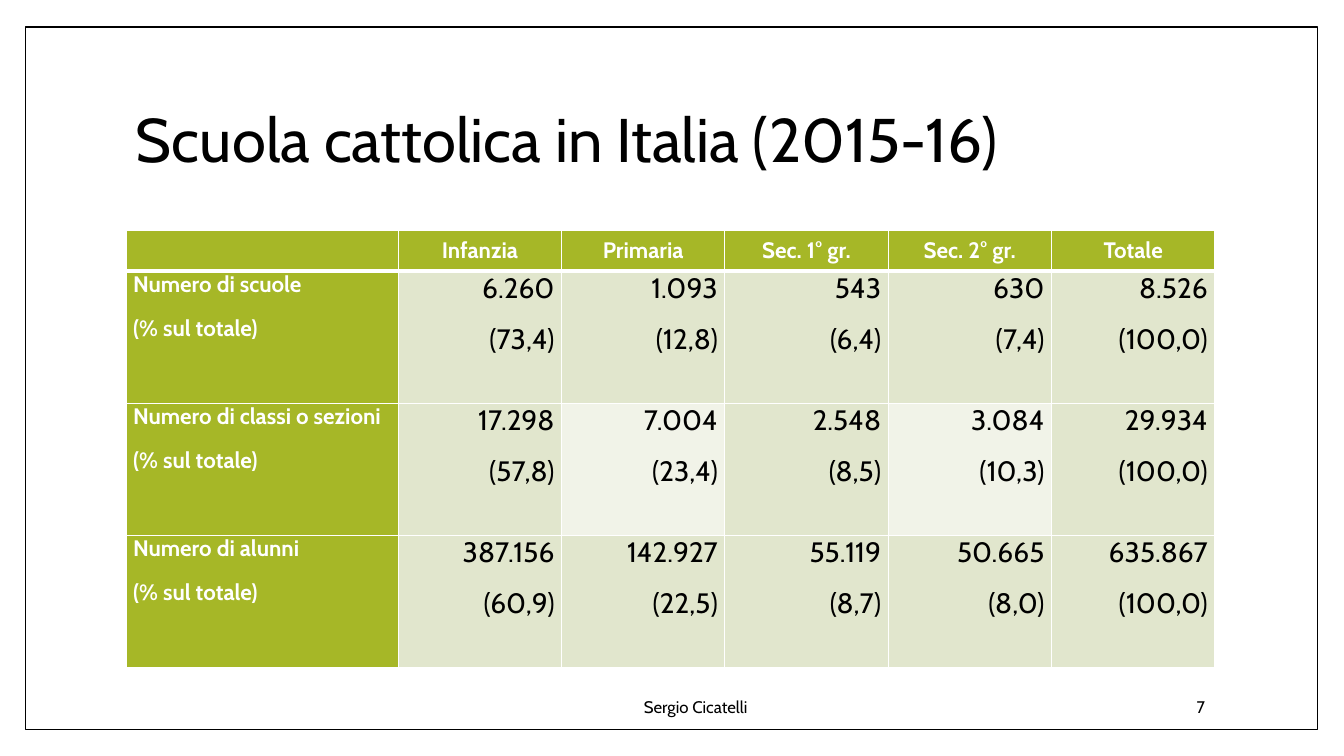
from dataclasses import dataclass

from lxml import etree
from pptx import Presentation
from pptx.dml.color import RGBColor
from pptx.enum.shapes import MSO_SHAPE
from pptx.enum.text import MSO_ANCHOR, PP_ALIGN
from pptx.oxml.ns import qn
from pptx.util import Emu, Pt

PX = 9144  # 100 px to the inch
RECT = MSO_SHAPE.RECTANGLE
TOP, MIDDLE = MSO_ANCHOR.TOP, MSO_ANCHOR.MIDDLE
LEFT, CENTER, RIGHT = PP_ALIGN.LEFT, PP_ALIGN.CENTER, PP_ALIGN.RIGHT


@dataclass(frozen=True)
class Theme:
    font: str = "Cabin"
    ink: str = "000000"
    paper: str = "FFFFFF"
    green: str = "A6B727"
    band: str = "E1E6CD"
    pale: str = "F1F3E8"
    title: int = 44
    figure: int = 20
    label: int = 16
    footer: int = 12


THEME = Theme()

HEADERS = ["", "Infanzia", "Primaria", "Sec. 1° gr.", "Sec. 2° gr.", "Totale"]
SHARE = "(% sul totale)"
ROWS = [
    ("Numero di scuole",
     ["6.260", "1.093", "543", "630", "8.526"],
     ["73,4", "12,8", "6,4", "7,4", "100,0"]),
    ("Numero di classi o sezioni",
     ["17.298", "7.004", "2.548", "3.084", "29.934"],
     ["57,8", "23,4", "8,5", "10,3", "100,0"]),
    ("Numero di alunni",
     ["387.156", "142.927", "55.119", "50.665", "635.867"],
     ["60,9", "22,5", "8,7", "8,0", "100,0"]),
]


def px(*lengths):
    return [Emu(n * PX) for n in lengths]


def rgb(value):
    return RGBColor.from_string(value)


def set_attrs(obj, values):
    for name, value in values.items():
        setattr(obj, name, value)


def write(tf, lines, size, color=THEME.ink, bold=False, **para_format):
    """Put each line in its own paragraph, all in one style."""
    for i, line in enumerate(lines):
        p = tf.add_paragraph() if i else tf.paragraphs[0]
        set_attrs(p, para_format)
        r = p.add_run()
        r.text = line
        set_attrs(r.font, {"name": THEME.font, "size": Pt(size), "bold": bold})
        r.font.color.rgb = rgb(color)


def add_text(s, box, text, size, **para_format):
    tf = s.shapes.add_textbox(*px(*box)).text_frame
    set_attrs(tf, {"word_wrap": True, "vertical_anchor": MIDDLE})
    write(tf, [text], size, **para_format)


def add_frame(s, box):
    sp = s.shapes.add_shape(RECT, *px(*box))
    sp.shadow.inherit = False
    sp.fill.solid()
    sp.fill.fore_color.rgb = rgb(THEME.paper)
    sp.line.color.rgb = rgb(THEME.ink)
    sp.line.width = Pt(1)


def set_borders(cell, widths):
    tc_pr = cell._tc.get_or_add_tcPr()
    for side, width in widths.items():
        ln = etree.SubElement(tc_pr, qn(f"a:ln{side}"), w=str(Pt(width)))
        fill = etree.SubElement(ln, qn("a:solidFill"))
        etree.SubElement(fill, qn("a:srgbClr"), val=THEME.paper)


def cell_lines(row, col):
    if row == 0:
        return [HEADERS[col]] if HEADERS[col] else []
    label, counts, shares = ROWS[row - 1]
    if col == 0:
        return [label, SHARE]
    return [counts[col - 1], f"({shares[col - 1]})"]


def fill_cell(cell, row, col):
    heading = row == 0 or col == 0
    set_attrs(cell, {
        "margin_left": Emu(7 * PX), "margin_right": Emu(7 * PX),
        "margin_top": 0, "margin_bottom": 0,
        "vertical_anchor": TOP if row else MIDDLE,
    })
    # A thick rule parts the header from the body
    set_borders(cell, {"L": 1, "R": 1, "T": 3 if row == 1 else 1,
                       "B": 1 if row else 3})
    # Odd rows and odd columns are banded
    body = THEME.band if row % 2 or col % 2 else THEME.pale
    cell.fill.solid()
    cell.fill.fore_color.rgb = rgb(THEME.green if heading else body)
    write(cell.text_frame, cell_lines(row, col),
          THEME.label if heading else THEME.figure,
          THEME.paper if heading else THEME.ink, heading,
          alignment=CENTER if row == 0 else RIGHT if col else LEFT,
          space_before=Pt(6), space_after=Pt(6))


def add_school_table(s, box):
    x, y, w, h = box
    header_h, label_w = 40, w // 4
    n_rows, n_cols = len(ROWS) + 1, len(HEADERS)
    table = s.shapes.add_table(n_rows, n_cols, *px(*box)).table
    set_attrs(table, {"first_col": True, "horz_banding": False})
    for i, column in enumerate(table.columns):
        column.width = Emu(((w - label_w) // (n_cols - 1) if i else label_w) * PX)
    for i, row in enumerate(table.rows):
        row.height = Emu(((h - header_h) // len(ROWS) if i else header_h) * PX)
        for j, cell in enumerate(row.cells):
            fill_cell(cell, i, j)


def add_footer(s, box):
    x, y, w, h = box
    name_w, number_w = 516, 187
    add_text(s, (x + 307, y, name_w, h), "Sergio Cicatelli", THEME.footer,
             alignment=CENTER)
    add_text(s, (x + w - number_w, y, number_w, h), "7", THEME.footer,
             alignment=RIGHT)


def build_slide(prs, left, width):
    s = prs.slides.add_slide(prs.slide_layouts[6])
    # Border
    add_frame(s, (25, 27, 1282, 697))
    # Title
    add_text(s, (left, 67, width, 148), "Scuola cattolica in Italia (2015-16)",
             THEME.title, line_spacing=0.9)
    # Figures by school level
    add_school_table(s, (left, 229, width, 433))
    # Author and slide number
    add_footer(s, (left, 681, width, 40))


def main():
    prs = Presentation()
    prs.slide_width, prs.slide_height = px(1333, 750)
    build_slide(prs, 125, 1080)
    prs.save("out.pptx")


if __name__ == "__main__":
    main()
